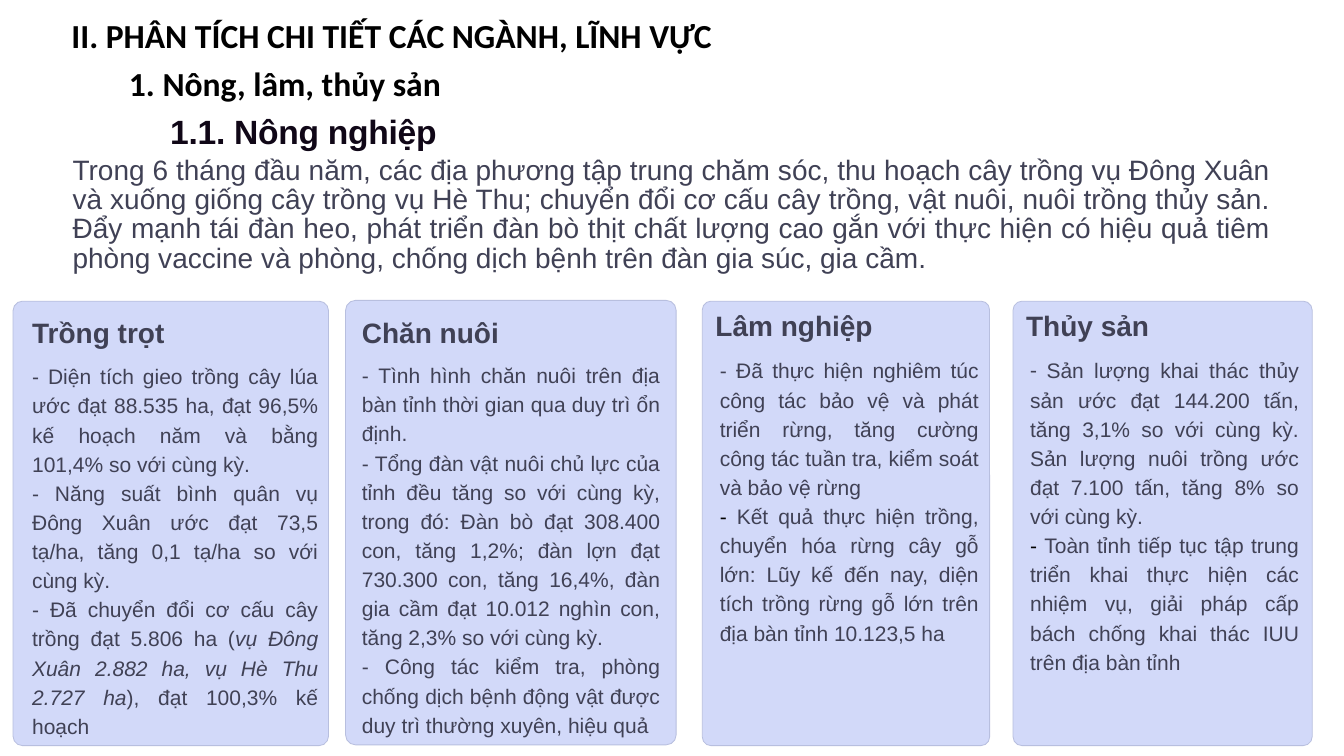
from pptx import Presentation
from pptx.dml.color import RGBColor
from pptx.enum.shapes import MSO_SHAPE
from pptx.enum.text import PP_ALIGN
from pptx.util import Cm, Pt

ROUND = MSO_SHAPE.ROUNDED_RECTANGLE
JUST = PP_ALIGN.JUSTIFY
HEX = {"black": "000000", "head": "100717", "text": "404155",
       "card": "D2D9F9", "edge": "B8BFDF"}
COL = {name: RGBColor.from_string(code) for name, code in HEX.items()}

deck = Presentation()
deck.slide_width, deck.slide_height = Cm(33.87), Cm(19.05)
slide = deck.slides.add_slide(deck.slide_layouts[6])


def add_box(x, y, w, h, wrap=True, inset=True):
    """Add a text box and return its text frame."""
    frame = slide.shapes.add_textbox(Cm(x), Cm(y), Cm(w), Cm(h)).text_frame
    frame.word_wrap = wrap
    if not inset:
        frame.margin_left = frame.margin_right = 0
        frame.margin_top = frame.margin_bottom = 0
    return frame


def add_run(para, text, size, color="text", face="Arial", bold=False, ital=False):
    """Append one styled run to a paragraph."""
    run = para.add_run()
    run.text = text
    font = run.font
    font.size, font.name, font.bold, font.italic = Pt(size), face, bold, ital
    font.color.rgb = COL[color]
    return run


# Headings: text, x, y, width, colour, font, wrap
heads = [
    ("II. PHÂN TÍCH CHI TIẾT CÁC NGÀNH, LĨNH VỰC", 1.55, 0.25, 23.11, "black", "Calibri", True),
    ("1. Nông, lâm, thủy sản", 3, 1.45, 9.58, "black", "Calibri", True),
    ("1.1. Nông nghiệp", 4.04, 2.67, 7.32, "head", "Arial", False),
]
for text, x, y, w, color, face, wrap in heads:
    para = add_box(x, y, w, 1.27, wrap).paragraphs[0]
    run = add_run(para, text, 24, color, face, bold=True)
run.font._element.set("spc", "-20")

# Introduction
para = add_box(1.83, 3.96, 30.2, 2.21, inset=False).paragraphs[0]
para.alignment, para.line_spacing = JUST, Pt(20.8)
add_run(para, "Trong 6 tháng đầu năm, các địa phương tập trung chăm sóc, thu hoạch cây trồng "
        "vụ Đông Xuân và xuống giống cây trồng vụ Hè Thu; chuyển đổi cơ cấu cây trồng, vật nuôi, "
        "nuôi trồng thủy sản. Đẩy mạnh tái đàn heo, phát triển đàn bò thịt chất lượng cao gắn với "
        "thực hiện có hiệu quả tiêm phòng vaccine và phòng, chống dịch bệnh trên đàn gia súc, "
        "gia cầm.", 20)

# Run styles in the cards
STYLES = {
    "plain": {"size": 15},
    "ital": {"size": 15, "ital": True},
    "dark": {"size": 15, "color": "black"},
    "dash": {"size": 16, "face": "Calibri"},
}

# Cards: title, card (x, y, width), title (x, y), body (x, y, width), paragraphs of runs
cards = [
    ("Trồng trọt", (0.33, 7.59, 7.95), (0.81, 8.08), (0.81, 9.07, 7.21), [
        [("plain", "- Diện tích gieo trồng cây lúa ước đạt 88.535 ha, đạt 96,5% kế hoạch năm "
                   "và bằng 101,4% so với cùng kỳ.")],
        [("plain", "- Năng suất bình quân vụ Đông Xuân ước đạt 73,5 tạ/ha, tăng 0,1 tạ/ha "
                   "so với cùng kỳ.")],
        [("plain", "- Đã chuyển đổi cơ cấu cây trồng đạt 5.806 ha ("),
         ("ital", "vụ Đông Xuân 2.882 ha, vụ Hè Thu 2.727 ha"),
         ("plain", "), đạt 100,3% kế hoạch")],
    ]),
    ("Chăn nuôi", (8.71, 7.57, 8.33), (9.12, 8.08), (9.12, 9.04, 7.52), [
        [("plain", "- Tình hình chăn nuôi trên địa bàn tỉnh thời gian qua duy trì ổn định.")],
        [("plain", "- Tổng đàn vật nuôi chủ lực của tỉnh đều tăng so với cùng kỳ, trong đó: "
                   "Đàn bò đạt 308.400 con, tăng 1,2%; đàn lợn đạt 730.300 con, tăng 16,4%, "
                   "đàn gia cầm đạt 10.012 nghìn con, tăng 2,3% so với cùng kỳ.")],
        [("plain", "- Công tác kiểm tra, phòng chống dịch bệnh động vật được duy trì "
                   "thường xuyên, hiệu quả")],
    ]),
    ("Lâm nghiệp", (17.7, 7.59, 7.24), (18.03, 7.92), (18.14, 8.92, 6.53), [
        [("plain", "- Đã thực hiện nghiêm túc công tác bảo vệ và phát triển rừng, tăng cường "
                   "công tác tuần tra, kiểm soát và bảo vệ rừng")],
        [("dark", "- "),
         ("plain", "Kết quả thực hiện trồng, chuyển hóa rừng cây gỗ lớn: Lũy kế đến nay, "
                   "diện tích trồng rừng gỗ lớn trên địa bàn tỉnh 10.123,5 ha")],
    ]),
    ("Thủy sản", (25.53, 7.59, 7.54), (25.86, 7.92), (25.96, 8.92, 6.78), [
        [("dash", "- "),
         ("plain", "Sản lượng khai thác thủy sản ước đạt 144.200 tấn, tăng 3,1% so với cùng kỳ. "
                   "Sản lượng nuôi trồng ước đạt 7.100 tấn, tăng 8% so với cùng kỳ.")],
        [("dark", "- "),
         ("plain", "Toàn tỉnh tiếp tục tập trung triển khai thực hiện các nhiệm vụ, giải pháp "
                   "cấp bách chống khai thác IUU trên địa bàn tỉnh")],
    ]),
]
for title, (x, y, w), spot, (left, top, wide), paras in cards:
    card = slide.shapes.add_shape(ROUND, Cm(x), Cm(y), Cm(w), Cm(11.2))
    card.adjustments[0] = 0.03
    card.shadow.inherit = False
    card.fill.solid()
    card.fill.fore_color.rgb = COL["card"]
    card.line.color.rgb = COL["edge"]
    card.line.width = Pt(0.6)

    para = add_box(*spot, 5, 0.72, wrap=False, inset=False).paragraphs[0]
    para.line_spacing = Pt(20)
    add_run(para, title, 20, bold=True)

    frame = add_box(left, top, wide, 4.3, inset=False)
    for i, runs in enumerate(paras):
        para = frame.add_paragraph() if i else frame.paragraphs[0]
        para.alignment, para.line_spacing = JUST, Pt(20.8)
        for style, text in runs:
            add_run(para, text, **STYLES[style])

deck.save("out.pptx")
